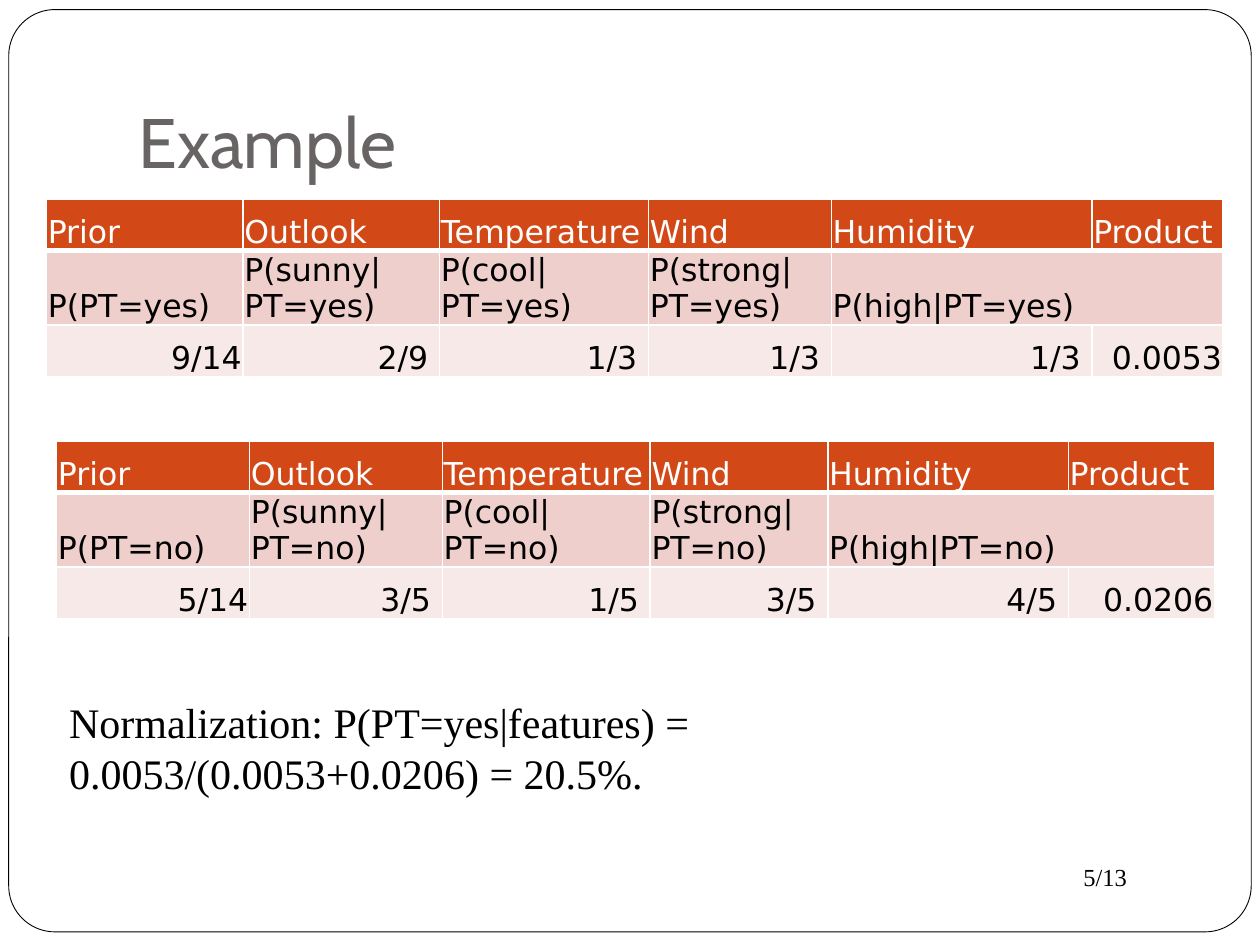
from lxml.etree import SubElement
from pptx import Presentation
from pptx.dml.color import RGBColor
from pptx.enum.shapes import MSO_SHAPE as Shape
from pptx.enum.text import MSO_ANCHOR as Anchor, PP_ALIGN as Align
from pptx.oxml.ns import qn
from pptx.util import Pt

COLORS = {
    "white": "FFFFFF",
    "black": "000000",
    "title": "696464",
    "header": "D34817",
    "formula": "EFCFCC",
    "value": "F7E9E8",
}


def style(paragraph, font_name, size, color, align=Align.LEFT):
    paragraph.alignment = align
    paragraph.font.name = font_name
    paragraph.font.size = Pt(size)
    paragraph.font.bold = False
    paragraph.font.color.rgb = RGBColor.from_string(COLORS[color])


def add_borders(cell, bottom_width):
    properties = cell._tc.get_or_add_tcPr()
    for side, width in (("L", 1), ("R", 1), ("T", 1), ("B", bottom_width)):
        line = SubElement(properties, qn(f"a:ln{side}"), w=str(Pt(width)))
        fill = SubElement(line, qn("a:solidFill"))
        SubElement(fill, qn("a:srgbClr"), val=COLORS["white"])


prs = Presentation()
prs.slide_width, prs.slide_height = Pt(720), Pt(540)
slide = prs.slides.add_slide(prs.slide_layouts[5])
shapes = slide.shapes

frame = shapes.add_shape(Shape.ROUNDED_RECTANGLE, Pt(5), Pt(5.5), Pt(710), Pt(527))
frame.adjustments[0] = 0.05
frame.shadow.inherit = False
frame.fill.solid()
frame.fill.fore_color.rgb = RGBColor.from_string(COLORS["white"])
frame.line.color.rgb = RGBColor.from_string(COLORS["black"])
frame.line.width = Pt(0.5)
shapes._spTree.insert(2, frame._element)

title = shapes.title
title.left, title.top, title.width, title.height = Pt(72), Pt(21.6), Pt(612), Pt(90)
title.text_frame.text = "Example"
title.text_frame.vertical_anchor = Anchor.BOTTOM
title.text_frame.margin_bottom = Pt(7.2)
style(title.text_frame.paragraphs[0], "Cabin", 40, "title")

headers = ["Prior", "Outlook", "Temperature", "Wind", "Humidity", "Product"]
conditions = ["sunny", "cool", "strong", "high"]
row_height = 29.5
likelihoods = [
    ("yes", 26.6, 113.8, [112.3, 112.3, 119.5, 104.4, 149, 75],
     ["9/14", "2/9 ", "1/3 ", "1/3 ", "1/3 ", "0.0053"]),
    ("no", 32.4, 252, [110.2, 110.2, 118.8, 101.5, 137.5, 83.5],
     ["5/14", "3/5 ", "1/5 ", "3/5 ", "4/5 ", "0.0206"]),
]

for outcome, left, top, widths, values in likelihoods:
    formulas = [f"P(PT={outcome})"] + [f"P({c}|PT={outcome})" for c in conditions] + [""]
    table = shapes.add_table(
        3, len(headers), Pt(left), Pt(top), Pt(sum(widths)), Pt(3 * row_height)
    ).table
    for column, width in zip(table.columns, widths):
        column.width = Pt(width)
    rows = [
        (headers, "header", "white", Align.LEFT, 3),
        (formulas, "formula", "black", Align.LEFT, 1),
        (values, "value", "black", Align.RIGHT, 1),
    ]
    for r, (texts, fill, color, align, bottom_width) in enumerate(rows):
        table.rows[r].height = Pt(row_height)
        for c, text in enumerate(texts):
            cell = table.cell(r, c)
            cell.text = text
            cell.vertical_anchor = Anchor.BOTTOM
            cell.margin_left = cell.margin_right = cell.margin_top = Pt(0.75)
            cell.margin_bottom = 0
            add_borders(cell, bottom_width)
            cell.fill.solid()
            cell.fill.fore_color.rgb = RGBColor.from_string(COLORS[fill])
            style(cell.text_frame.paragraphs[0], "DejaVu Sans", 18, color, align)
    table.cell(1, 4).merge(table.cell(1, 5))

notes = [
    ("Normalization: P(PT=yes|features) = \v0.0053/(0.0053+0.0206) = 20.5%.",
     32.4, 394.6, 657.4, 65.5, 24),
    ("5/13", 612, 488.9, 72, 24.5, 14),
]
for text, left, top, width, height, size in notes:
    box = shapes.add_textbox(Pt(left), Pt(top), Pt(width), Pt(height))
    box.text_frame.word_wrap = True
    box.text_frame.text = text
    style(box.text_frame.paragraphs[0], "Times New Roman", size, "black")

prs.save("out.pptx")
